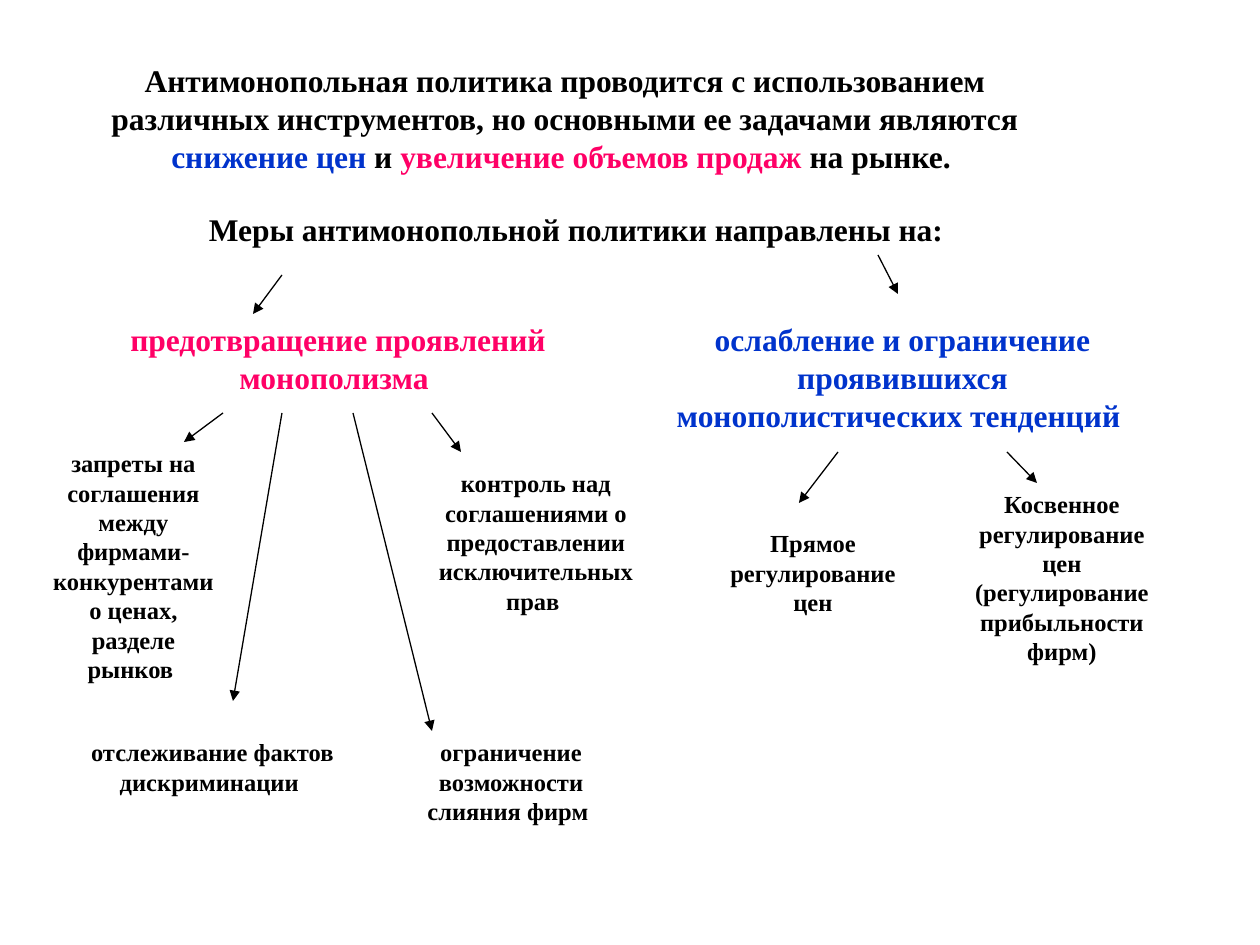
from lxml import etree
from pptx import Presentation
from pptx.dml.color import RGBColor
from pptx.enum.shapes import MSO_CONNECTOR
from pptx.enum.text import MSO_AUTO_SIZE, PP_ALIGN
from pptx.oxml.ns import qn
from pptx.util import Pt

LINE = MSO_CONNECTOR.STRAIGHT
GROW = MSO_AUTO_SIZE.SHAPE_TO_FIT_TEXT
MID = PP_ALIGN.CENTER
SCALE = 914400 / 126
BLACK, BLUE, PINK = "000000", "0033CC", "FF0066"
BIG = {"name": "Times New Roman", "size": Pt(18), "bold": True}
SMALL = {**BIG, "size": Pt(14)}

LEFT = {
    "title": ((61, 0, 486, 88), "предотвращение проявлений монополизма ", PINK),
    "items": [
        ((0, 128, 199, 247), "запреты на соглашения между фирмами-конкурентами о ценах, разделе рынков "),
        ((348, 417, 258, 101), "ограничение возможности слияния фирм "),
        ((388, 148, 228, 159), "контроль над соглашениями о предоставлении исключительных прав "),
        ((40, 417, 277, 72), "отслеживание фактов дискриминации "),
    ],
    "start": 99,
    "arrows": [(189, 150, 128), (248, 199, 387), (319, 398, 417), (398, 427, 138)],
}
RIGHT = {
    "title": ((0, 0, 525, 126), "ослабление и ограничение проявившихся монополистических тенденций ", BLUE),
    "items": [
        ((59, 208, 228, 101), "Прямое регулирование цен"),
        ((308, 169, 228, 189), "Косвенное регулирование цен (регулирование прибыльности фирм)"),
    ],
    "start": 138,
    "arrows": [(198, 159, 189), (367, 397, 169)],
}


def px(num):
    return round(num * SCALE)


def color(hexa):
    return RGBColor.from_string(hexa)


def label(slide, base, box, runs, style):
    x, y, w, h = box
    shape = slide.shapes.add_textbox(px(base[0] + x), px(base[1] + y), px(w), px(h))
    frame = shape.text_frame
    for key, val in {"word_wrap": True, "auto_size": GROW}.items():
        setattr(frame, key, val)
    para = frame.paragraphs[0]
    para.alignment = MID
    for text, tint in runs:
        run = para.add_run()
        run.text = text
        for key, val in style.items():
            setattr(run.font, key, val)
        run.font.color.rgb = color(tint)


def arrow(slide, base, start, end):
    ends = [px(base[i] + point[i]) for point in (start, end) for i in (0, 1)]
    link = slide.shapes.add_connector(LINE, *ends)
    link.line.width = Pt(0.75)
    link.line.color.rgb = color(BLACK)
    etree.SubElement(link.line._get_or_add_ln(), qn("a:tailEnd"), type="triangle")
    etree.SubElement(link._element.spPr, qn("a:effectLst"))


def header(slide, base):
    label(slide, base, (0, 0, 1002, 126), [
        ("Антимонопольная политика проводится с использованием различных "
         "инструментов, но основными ее задачами являются ", BLACK),
        ("снижение цен", BLUE),
        (" и ", BLACK),
        ("увеличение объемов продаж", PINK),
        (" на рынке. ", BLACK),
    ], BIG)
    label(slide, base, (0, 149, 1032, 50),
          [("Меры антимонопольной политики направлены на: ", BLACK)], BIG)
    arrow(slide, base, (218, 220), (189, 259))
    arrow(slide, base, (814, 200), (834, 239))


def branch(slide, base, data):
    box, text, tint = data["title"]
    label(slide, base, box, [(text, tint)], BIG)
    for box, text in data["items"]:
        label(slide, base, box, [(text, BLACK)], SMALL)
    for x, to_x, to_y in data["arrows"]:
        arrow(slide, base, (x, data["start"]), (to_x, to_y))


def main():
    deck = Presentation()
    deck.slide_width, deck.slide_height = px(1260), px(945)
    slide = deck.slides.add_slide(deck.slide_layouts[6])
    header(slide, (64, 55))
    branch(slide, (34, 314), LEFT)
    branch(slide, (640, 314), RIGHT)
    deck.save("out.pptx")


if __name__ == "__main__":
    main()
